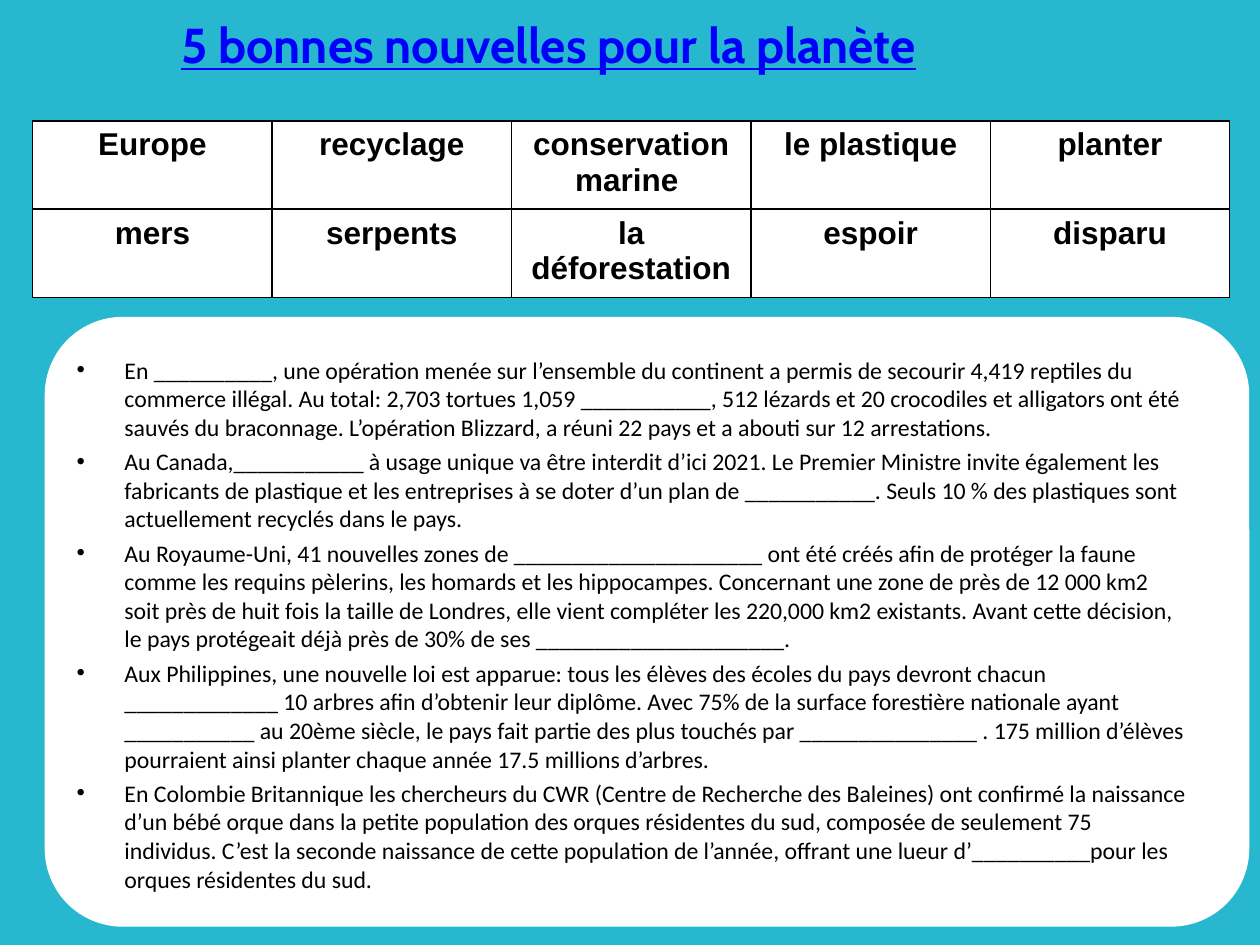
import pptx
import pptx.dml.color
import pptx.enum.shapes
import pptx.enum.text
import pptx.oxml
import pptx.oxml.ns
import pptx.util
from pptx.util import Inches

COLOURS = {"background": "27B8CF", "panel": "FFFFFF", "text": "000000", "title": "0000FF"}

TITLE = "5 bonnes nouvelles pour la planète"
WORDS = [
    ["Europe", "recyclage", "conservation marine ", "le plastique", "planter"],
    ["mers", "serpents", "la déforestation", "espoir", "disparu"],
]
NEWS = [
    "En __________, une opération menée sur l’ensemble du continent a permis de secourir "
    "4,419 reptiles du commerce illégal. Au total: 2,703 tortues 1,059 ___________, 512 lézards "
    "et 20 crocodiles et alligators ont été sauvés du braconnage. L’opération Blizzard, a réuni "
    "22 pays et a abouti sur 12 arrestations.",
    "Au Canada,___________ à usage unique va être interdit d’ici 2021. Le Premier Ministre invite "
    "également les fabricants de plastique et les entreprises à se doter d’un plan de ___________. "
    "Seuls 10 % des plastiques sont actuellement recyclés dans le pays.",
    "Au Royaume-Uni, 41 nouvelles zones de _____________________ ont été créés afin de protéger "
    "la faune comme les requins pèlerins, les homards et les hippocampes. Concernant une zone de "
    "près de 12 000 km2 soit près de huit fois la taille de Londres, elle vient compléter les "
    "220,000 km2 existants. Avant cette décision, le pays protégeait déjà près de 30% de ses "
    "_____________________.",
    "Aux Philippines, une nouvelle loi est apparue: tous les élèves des écoles du pays devront "
    "chacun _____________ 10 arbres afin d’obtenir leur diplôme. Avec 75% de la surface forestière "
    "nationale ayant ___________ au 20ème siècle, le pays fait partie des plus touchés par "
    "_______________ . 175 million d’élèves pourraient ainsi planter chaque année 17.5 millions "
    "d’arbres.",
    "En Colombie Britannique les chercheurs du CWR (Centre de Recherche des Baleines) ont confirmé "
    "la naissance d’un bébé orque dans la petite population des orques résidentes du sud, composée "
    "de seulement 75 individus. C’est la seconde naissance de cette population de l’année, offrant "
    "une lueur d’__________pour les orques résidentes du sud.",
]


def colour(name):
    return pptx.dml.color.RGBColor.from_string(COLOURS[name])


def fill_solid(fill, name):
    fill.solid()
    fill.fore_color.rgb = colour(name)


def add_run(paragraph, text, font_name, size, colour_name="text", bold=False, underline=False):
    run = paragraph.add_run()
    run.text = text
    font = run.font
    font.name = font_name
    font.size = pptx.util.Pt(size)
    font.color.rgb = colour(colour_name)
    font.bold = bold
    font.underline = underline


def add_text_frame(slide, left, top, width, height):
    text_frame = slide.shapes.add_textbox(left, top, width, height).text_frame
    text_frame.word_wrap = True
    return text_frame


def add_title(slide, left, top, width, height):
    text_frame = add_text_frame(slide, left, top, width, height)
    add_run(text_frame.paragraphs[0], TITLE, "Cabin", 28, "title", bold=True, underline=True)


def add_cell_borders(cell):
    """Put a thin line on all four sides; borders must precede the fill."""
    properties = cell._tc.get_or_add_tcPr()
    for index, side in enumerate(("lnL", "lnR", "lnT", "lnB")):
        border = pptx.oxml.parse_xml(
            f'<a:{side} {pptx.oxml.ns.nsdecls("a")} w="12700"><a:solidFill>'
            f'<a:srgbClr val="{COLOURS["text"]}"/></a:solidFill></a:{side}>'
        )
        properties.insert(index, border)


def add_word_bank(slide, left, top, width, height):
    frame = slide.shapes.add_table(len(WORDS), len(WORDS[0]), left, top, width, height)
    table = frame.table
    for row, words in enumerate(WORDS):
        for column, word in enumerate(words):
            cell = table.cell(row, column)
            fill_solid(cell.fill, "panel")
            add_cell_borders(cell)
            paragraph = cell.text_frame.paragraphs[0]
            paragraph.alignment = pptx.enum.text.PP_ALIGN.CENTER
            add_run(paragraph, word, "Arial", 18, bold=True)


def add_bullet(paragraph):
    properties = paragraph._p.get_or_add_pPr()
    indent = Inches(0.38)
    properties.set("marL", str(indent))
    properties.set("indent", str(-indent))
    namespace = pptx.oxml.ns.nsdecls("a")
    for xml in (
        f'<a:buClr {namespace}><a:srgbClr val="{COLOURS["text"]}"/></a:buClr>',
        f'<a:buFont {namespace} typeface="Arial"/>',
        f'<a:buChar {namespace} char="•"/>',
    ):
        properties.append(pptx.oxml.parse_xml(xml))


def add_news_panel(slide, left, top, width, height):
    panel = slide.shapes.add_shape(
        pptx.enum.shapes.MSO_SHAPE.ROUNDED_RECTANGLE, left, top, width, height
    )
    panel.adjustments[0] = 0.127
    panel.shadow.inherit = False
    fill_solid(panel.fill, "panel")
    panel.line.color.rgb = colour("panel")
    panel.line.width = pptx.util.Pt(0.75)

    text_frame = add_text_frame(slide, left + Inches(0.15), top, width - Inches(0.55), height)
    text_frame.margin_top = Inches(0.3)
    for index, news in enumerate(NEWS):
        paragraph = text_frame.add_paragraph() if index else text_frame.paragraphs[0]
        paragraph.line_spacing = pptx.util.Pt(16.35)
        paragraph.space_before = pptx.util.Pt(3.2)
        add_bullet(paragraph)
        add_run(paragraph, news, "Calibri", 13.6)


def main():
    presentation = pptx.Presentation()
    presentation.slide_width = Inches(10)
    presentation.slide_height = Inches(7.5)
    slide = presentation.slides.add_slide(presentation.slide_layouts[6])
    fill_solid(slide.background.fill, "background")
    add_news_panel(slide, Inches(0.36), Inches(2.52), Inches(9.55), Inches(4.83))
    add_word_bank(slide, Inches(0.26), Inches(0.96), Inches(9.5), Inches(1.32))
    add_title(slide, Inches(1.34), Inches(0.07), Inches(7.33), Inches(0.57))
    presentation.save("out.pptx")


if __name__ == "__main__":
    main()
